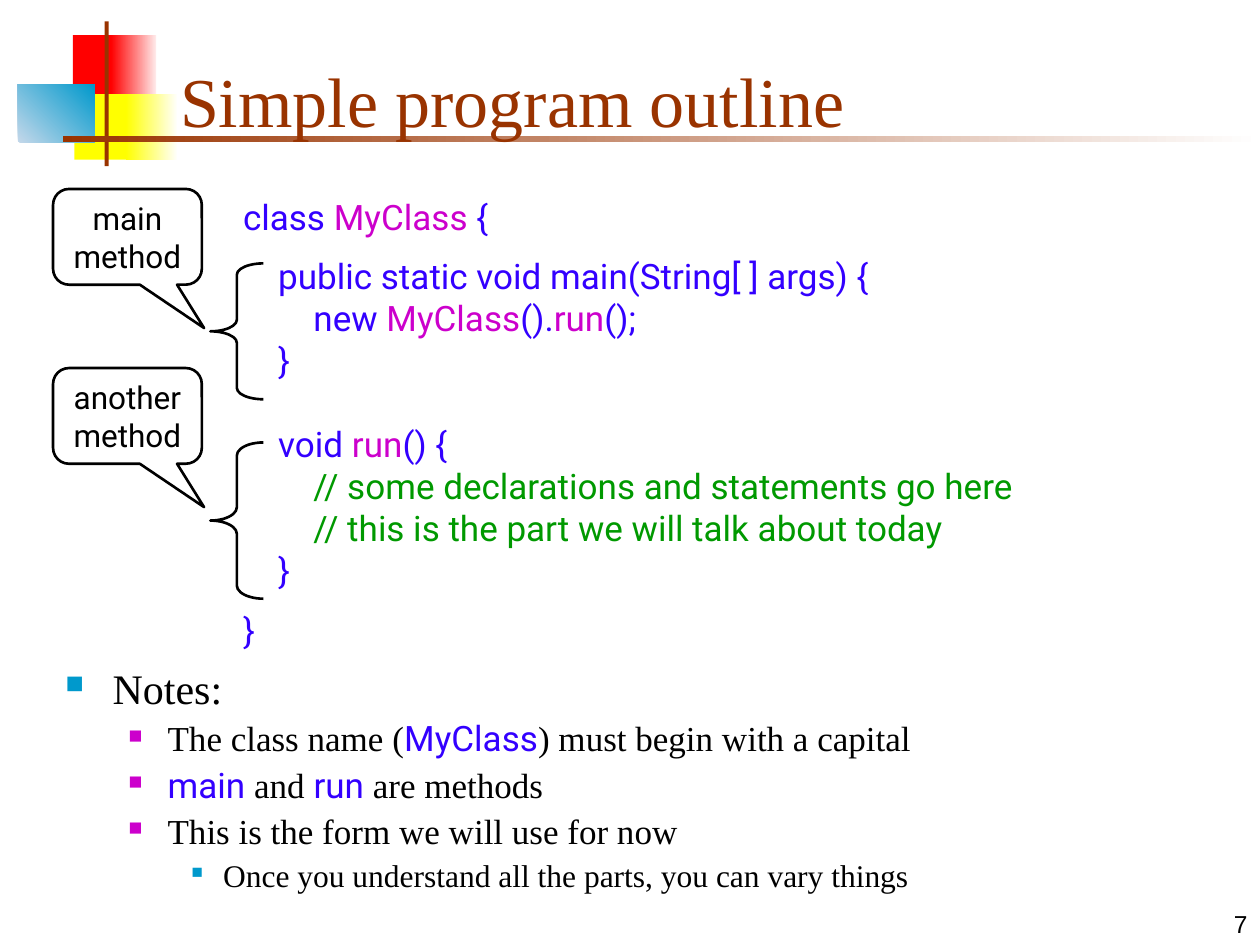
from lxml.etree import SubElement
from pptx import Presentation
from pptx.dml.color import RGBColor as Rgb
from pptx.enum.shapes import MSO_SHAPE as Shape
from pptx.enum.text import MSO_ANCHOR as Anchor, PP_ALIGN as Align
from pptx.oxml.ns import qn
from pptx.util import Cm, Pt

COLOURS = {
    "black": "000000", "brown": "993300", "white": "FFFFFF",
    "red": "FF0000", "pale red": "FFEAEA",
    "yellow": "FFFF00", "pale yellow": "FFFFF8",
    "blue": "0099CC", "pale blue": "C4D8EA",
    "code": "3300FF", "name": "CC00CC", "comment": "009900",
}
SERIF, SANS, PLAIN = "Times New Roman", "Roboto", "Arial"

BLOCKS = [
    ((1.47, 0.71, 0.89, 1.32), ["red"], 0),
    ((2.24, 0.71, 0.91, 1.32), ["red", "pale red"], 0),
    ((1.5, 1.9, 1.17, 1.32), ["yellow"], 0),
    ((2.54, 1.9, 1.02, 1.32), ["yellow", "pale yellow"], 0),
    ((0.36, 1.7, 1.55, 1.17), ["pale blue", "blue"], 45),
    ((2.11, 0.43, 0.08, 2.92), ["brown"], 0),
    ((1.27, 2.74, 24.13, 0.13), ["brown", "white"], 0),
]
CODE_STEP = 0.71
CODE = [
    (0, 0, [("class ", "code"), ("MyClass", "name"), (" {", "code")]),
    (1, 10, [("public static void main(String[ ] args) {", "code")]),
    (2, 0, [("new ", "code"), ("MyClass", "name"), ("().", "code"),
            ("run", "name"), ("();", "code")]),
    (1, 0, [("}", "code")]),
    (1, 24, [("void ", "code"), ("run", "name"), ("() {", "code")]),
    (2, 0, [("// some declarations and statements go here", "comment")]),
    (2, 0, [("// this is the part we will talk about today", "comment")]),
    (1, 0, [("}", "code")]),
    (0, 10, [("}", "code")]),
]
LEVELS = [
    {"size": 24, "left": 0.95, "hang": 0.95, "colour": "blue", "bullet": 60},
    {"size": 20, "left": 2.06, "hang": 0.79, "colour": "name", "bullet": 55},
    {"size": 18, "left": 3.18, "hang": 0.64, "colour": "blue", "bullet": 50},
]
NOTES = [
    (0, [("Notes:", "black")]),
    (1, [("The class name (", "black"), ("MyClass", "code"),
         (") must begin with a capital", "black")]),
    (1, [("main", "code"), (" and ", "black"), ("run", "code"),
         (" are methods", "black")]),
    (1, [("This is the form we will use for now", "black")]),
    (2, [("Once you understand all the parts, you can vary things", "black")]),
]
METHODS = [
    ("main method", 3.81, 5.31, 2.74, 0.215),
    ("another method", 7.42, 8.92, 3.15, 0.249),
]


def apply(target, values):
    for name, value in values.items():
        setattr(target, name, value)


class Slide:
    def __init__(self, page):
        self.page = page

    def colour(self, name):
        return Rgb.from_string(COLOURS[name])

    def shape(self, kind, place):
        shape = self.page.shapes.add_shape(kind, *map(Cm, place))
        shape.shadow.inherit = False
        return shape

    def block(self, place, colours, angle):
        block = self.shape(Shape.RECTANGLE, place)
        block.line.fill.background()
        if len(colours) == 1:
            block.fill.solid()
            block.fill.fore_color.rgb = self.colour(colours[0])
        else:
            block.fill.gradient()
            block.fill.gradient_angle = angle
            for stop, name in zip(block.fill.gradient_stops, colours):
                stop.color.rgb = self.colour(name)

    def outline(self, kind, place, adjustments):
        shape = self.shape(kind, place)
        shape.fill.background()
        shape.line.color.rgb = self.colour("black")
        shape.line.width = Pt(1.5)
        for index, value in enumerate(adjustments):
            shape.adjustments[index] = value
        return shape

    def brace(self, place, curl):
        self.outline(Shape.LEFT_BRACE, place, [curl, 0.5])

    def callout(self, place, text):
        box = self.outline(Shape.ROUNDED_RECTANGULAR_CALLOUT, place,
                           [0.515, 0.953, 0.167])
        box.text_frame.word_wrap = True
        para = box.text_frame.paragraphs[0]
        self.fill_para(para, [(text, "black")], 18, SANS, {"alignment": Align.CENTER})

    def text_box(self, place, anchor=Anchor.TOP):
        frame = self.page.shapes.add_textbox(*map(Cm, place)).text_frame
        apply(frame, {"word_wrap": True, "vertical_anchor": anchor})
        return frame

    def fill_para(self, para, spans, size, font, formats):
        apply(para, formats)
        for text, colour in spans:
            span = para.add_run()
            span.text = text
            face = SANS if colour == "code" else font
            apply(span.font, {"size": Pt(size), "name": face})
            span.font.color.rgb = self.colour(colour)

    def line(self, place, text, size, font, colour, align):
        frame = self.text_box(place, Anchor.BOTTOM)
        self.fill_para(frame.paragraphs[0], [(text, colour)], size, font,
                       {"alignment": align})

    def paras(self, place, rows):
        frame = self.text_box(place)
        for index, row in enumerate(rows):
            yield (frame.add_paragraph() if index else frame.paragraphs[0]), row

    def code(self, place, rows):
        for para, (depth, gap, spans) in self.paras(place, rows):
            self.fill_para(para, spans, 20, SANS, {"space_before": Pt(gap)})
            para._p.get_or_add_pPr().set("marL", str(Cm(depth * CODE_STEP)))

    def bullets(self, place, rows):
        for para, (depth, spans) in self.paras(place, rows):
            level = LEVELS[depth]
            self.fill_para(para, spans, level["size"], SERIF, {
                "level": depth, "line_spacing": 0.9, "space_before": Pt(4.8)})
            props = para._p.get_or_add_pPr()
            props.set("marL", str(Cm(level["left"])))
            props.set("indent", str(-Cm(level["hang"])))
            tint = SubElement(props, qn("a:buClr"))
            SubElement(tint, qn("a:srgbClr"), val=COLOURS[level["colour"]])
            SubElement(props, qn("a:buSzPct"), val=str(level["bullet"] * 1000))
            SubElement(props, qn("a:buChar"), char="■")


def main():
    deck = Presentation()
    apply(deck, {"slide_width": Cm(25.4), "slide_height": Cm(19.05)})
    slide = Slide(deck.slides.add_slide(deck.slide_layouts[6]))
    for block in BLOCKS:
        slide.block(*block)
    slide.line((20.12, 17.78, 5.28, 1.27), "7", 14, PLAIN, "black", Align.RIGHT)
    slide.line((3.38, 0.64, 21.64, 2.34), "Simple program outline", 40, SERIF,
               "brown", Align.LEFT)
    slide.bullets((1.07, 13.34, 23.83, 4.88), NOTES)
    slide.code((4.65, 3.81, 17.78, 9.58), CODE)
    for text, callout_top, brace_top, brace_height, curl in METHODS:
        slide.brace((4.24, brace_top, 1.07, brace_height), curl)
        slide.callout((1.07, callout_top, 3, 1.93), text)
    deck.save("out.pptx")


if __name__ == "__main__":
    main()
